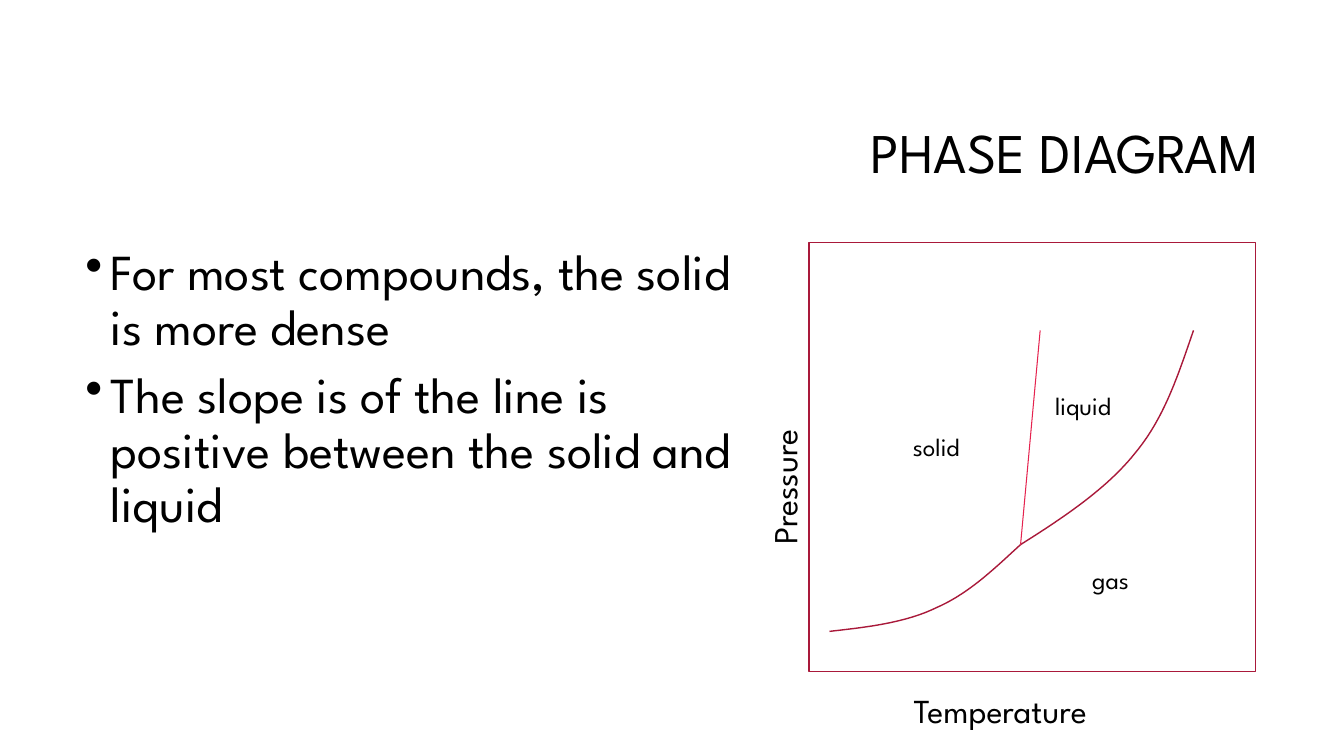
import pptx
import pptx.dml.color
import pptx.enum.shapes
import pptx.enum.text
import pptx.oxml.ns
import pptx.util
import lxml.etree

Pt = pptx.util.Pt
RGB = pptx.dml.color.RGBColor.from_string
ALIGN = pptx.enum.text.PP_ALIGN
ANCHOR = pptx.enum.text.MSO_ANCHOR
FIT = pptx.enum.text.MSO_AUTO_SIZE
SHAPE = pptx.enum.shapes.MSO_SHAPE
LINK = pptx.enum.shapes.MSO_CONNECTOR
FONT = "League Spartan"
COLORS = {"text": "000000", "curve": "A9193A", "slope": "E5224E", "page": "FFFFFF"}

TITLE = "PHASE DIAGRAM"
POINTS = [
    "For most compounds, the solid is more dense",
    "The slope is of the line is positive between the solid and liquid",
]
TRIPLE = (151, 216)
CURVES = [
    [(14.5, 278), (41, 275), (68.5, 272), (91, 261), (114, 251), (132.5, 233), TRIPLE],
    [TRIPLE, (182, 196.5), (212.5, 176), (232.5, 151), (253.5, 126), (263.5, 95), (274.5, 63)],
]
LABELS = [
    ("Temperature", (67.5, 316.5, 183, 36), 24, 0),
    ("Pressure", (-109.5, 113.5, 183, 36), 24, 270),
    ("solid", (67, 131.5, 58.5, 29), 18, 0),
    ("liquid", (168.5, 102, 74, 29), 18, 0),
    ("gas", (195, 226.5, 74, 29), 18, 0),
]


def apply(target, values):
    """Set each named format value on the target."""
    for name, value in values.items():
        setattr(target, name, value)


def style(para, size, **values):
    """Give a paragraph its font and layout values."""
    apply(para, values)
    apply(para.font, {"name": FONT, "size": Pt(size)})
    para.font.color.rgb = RGB(COLORS["text"])


def stroke(line, color, width):
    """Set a line's colour and width in points."""
    line.color.rgb = RGB(COLORS[color])
    line.width = Pt(width)


def place(shape, box):
    """Put a shape in a box given in points."""
    apply(shape, dict(zip(("left", "top", "width", "height"), map(Pt, box))))


def bullet(para):
    """Add a hanging bullet to a paragraph."""
    props = para._p.get_or_add_pPr()
    props.set("marL", str(Pt(18)))
    props.set("indent", str(Pt(-18)))
    mark = lxml.etree.SubElement(props, pptx.oxml.ns.qn("a:buChar"))
    mark.set("char", "•")


def bezier(ends, steps=24):
    """Return points along a cubic curve, without its start."""
    path = []
    for step in range(1, steps + 1):
        t = step / steps
        parts = ((1 - t) ** 3, 3 * t * (1 - t) ** 2, 3 * t * t * (1 - t), t ** 3)
        path.append(tuple(sum(p * end[axis] for p, end in zip(parts, ends)) for axis in (0, 1)))
    return path


def add_title(slide, box):
    """Place and format the slide title."""
    title = slide.shapes.title
    place(title, box)
    frame = title.text_frame
    frame.text = TITLE
    apply(frame, {"vertical_anchor": ANCHOR.MIDDLE, "word_wrap": True, "auto_size": FIT.NONE})
    style(frame.paragraphs[0], 40, alignment=ALIGN.RIGHT, line_spacing=0.9)


def add_body(slide, box):
    """Write the bulleted list."""
    frame = slide.shapes.add_textbox(*map(Pt, box)).text_frame
    frame.word_wrap = True
    for index, text in enumerate(POINTS):
        para = frame.add_paragraph() if index else frame.paragraphs[0]
        para.text = text
        apply(para, {"line_spacing": 0.9, "space_before": Pt(10 if index else 0)})
        bullet(para)
        style(para, 36)


def add_plot(slide, box):
    """Draw the frame, phase lines and labels."""
    left, top = box[:2]
    shapes = slide.shapes

    def shift(point):
        """Move a plot point onto the slide."""
        return Pt(left + point[0]), Pt(top + point[1])

    frame = shapes.add_shape(SHAPE.RECTANGLE, *map(Pt, box))
    frame.shadow.inherit = False
    frame.fill.background()
    stroke(frame.line, "curve", 1)

    for ends in CURVES:
        path = ends[:1] + bezier(ends[:4]) + bezier(ends[3:])
        build = shapes.build_freeform(*shift(path[0]))
        build.add_line_segments([shift(point) for point in path[1:]], close=False)
        curve = build.convert_to_shape()
        curve.shadow.inherit = False
        curve.fill.background()
        stroke(curve.line, "curve", 1)

    slope = shapes.add_connector(LINK.STRAIGHT, *shift(TRIPLE), *shift((165, 63)))
    lxml.etree.SubElement(slope._element.spPr, pptx.oxml.ns.qn("a:effectLst"))
    stroke(slope.line, "slope", 0.75)

    for text, (x, y, width, height), size, turn in LABELS:
        label = shapes.add_textbox(*shift((x, y)), Pt(width), Pt(height))
        label.rotation = turn
        apply(label.text_frame, {"text": text, "word_wrap": True, "auto_size": FIT.SHAPE_TO_FIT_TEXT})
        style(label.text_frame.paragraphs[0], size)


def main():
    """Build and save the slide."""
    deck = pptx.Presentation()
    apply(deck, {"slide_width": Pt(960), "slide_height": Pt(540)})
    slide = deck.slides.add_slide(deck.slide_layouts.get_by_name("Title Only"))
    slide.background.fill.solid()
    slide.background.fill.fore_color.rgb = RGB(COLORS["page"])
    add_title(slide, (228, 60.5, 678.5, 101.5))
    add_body(slide, (54, 173, 504.5, 317))
    add_plot(slide, (578, 173, 319, 306.5))
    deck.save("out.pptx")


if __name__ == "__main__":
    main()
